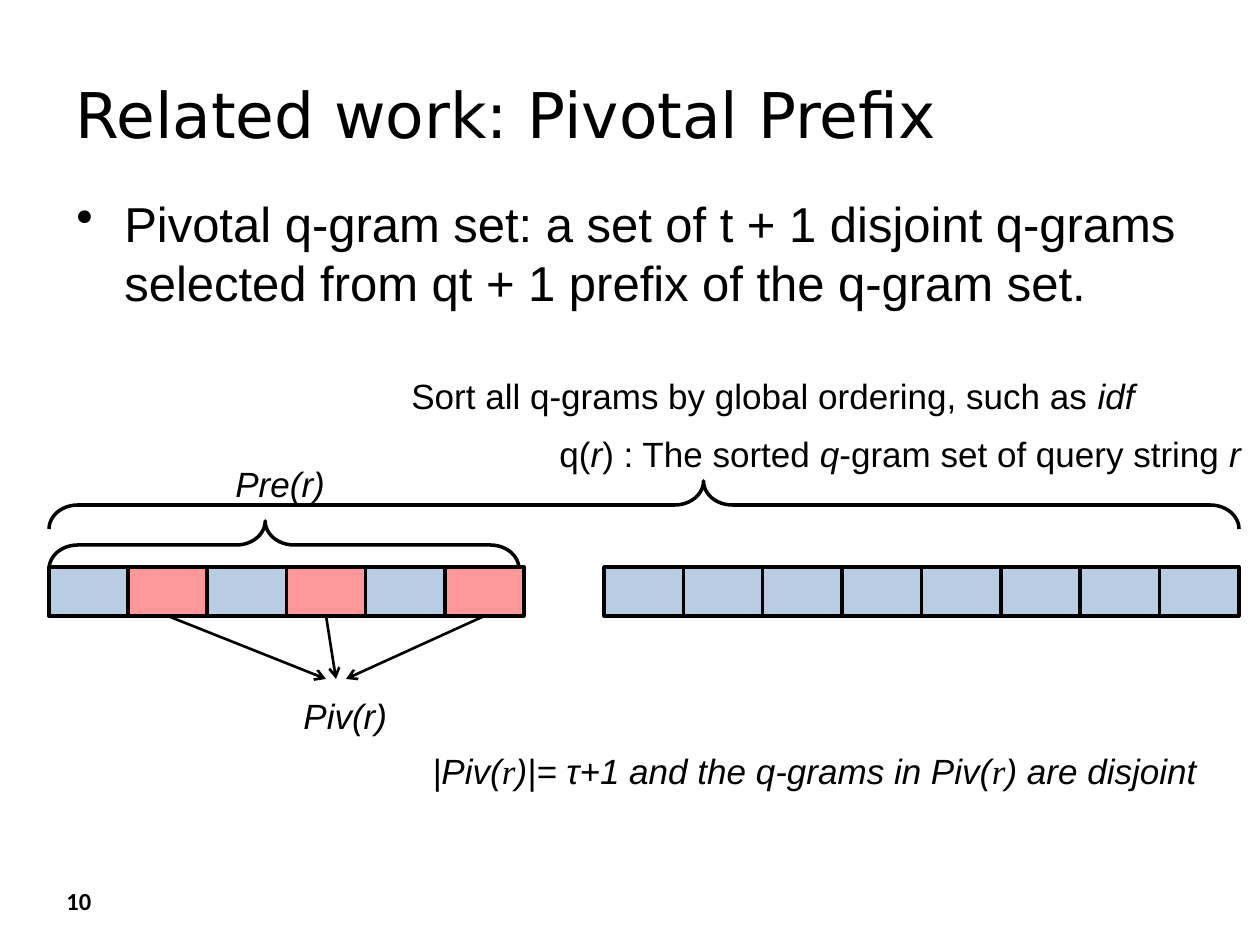
from lxml import etree
from pptx import Presentation
from pptx import util as u
from pptx.dml.color import RGBColor
from pptx.enum import shapes, text
from pptx.oxml.ns import qn

PX = 914400 / 126
COLORS = {"black": "000000", "gram": "4F81BD", "pivot": "FF0000"}
BLACK = RGBColor.from_string(COLORS["black"])


def px(*values):
    return [u.Emu(round(v * PX)) for v in values]


def add_text(box, runs, size, indent=0, hanging=0, bullet=None, wrap=True, top=6):
    """Add one paragraph; each run is its text and a dict of font values."""
    tf = s.shapes.add_textbox(*px(*box)).text_frame
    tf.word_wrap = wrap
    tf.vertical_anchor = text.MSO_ANCHOR.TOP
    tf.margin_top = px(top)[0]
    p = tf.paragraphs[0]
    pPr = p._p.get_or_add_pPr()
    pPr.set("marL", str(px(indent)[0]))
    pPr.set("indent", str(px(-hanging)[0]))
    if bullet:
        etree.SubElement(pPr, qn("a:buChar")).set("char", bullet)
    p.line_spacing = u.Pt(round(size * 1.22, 1))
    for words, font in runs:
        r = p.add_run()
        r.text = words
        r.font.color.rgb = BLACK
        for name, value in {"name": "Arial", "size": u.Pt(size), **font}.items():
            setattr(r.font, name, value)


prs = Presentation()
prs.slide_width, prs.slide_height = px(1260, 945)
s = prs.slides.add_slide(prs.slide_layouts[6])

# Title, statement and slide number
add_text((54, 879, 59, 43), [("10", {"name": "Calibri", "bold": True})], 14)
add_text((63, 66, 1134, 110),
         [("Related work: Pivotal Prefix", {"name": "DejaVu Sans"})], 36, top=8)
add_text((64, 184, 1134, 173),
         [("Pivotal q-gram set: a set of t + 1 disjoint q-grams selected "
           "from qt + 1 prefix of the q-gram set.", {})],
         28, indent=48, hanging=48, bullet="•", top=8)

# Prefix cells, then the rest of the sorted q-gram set
cells = []
for left, width, count, pivots in ((49, 475, 6, (1, 3, 5)), (604, 635, 8, ())):
    for i in range(count):
        sp = s.shapes.add_shape(shapes.MSO_SHAPE.RECTANGLE,
                                *px(left + i * width / count, 567, width / count, 49))
        sp.shadow.inherit = False
        sp.fill.solid()
        color = COLORS["pivot" if i in pivots else "gram"]
        sp.fill.fore_color.rgb = RGBColor.from_string(color)
        srgb = sp._element.spPr.find(".//" + qn("a:srgbClr"))
        etree.SubElement(srgb, qn("a:alpha")).set("val", "40000")
        sp.line.color.rgb = BLACK
        sp.line.width = u.Pt(2)
        cells.append(sp)

# Braces: right braces turned to point up
for left, top, width, height, tip in ((49, 481, 1190, 48, 0.55), (49, 521, 470, 48, 0.46)):
    sp = s.shapes.add_shape(shapes.MSO_SHAPE.RIGHT_BRACE,
                            *px(left + (width - height) / 2, top - (width - height) / 2,
                                height, width))
    sp.rotation = 270
    sp.adjustments[0] = 0.6
    sp.adjustments[1] = tip
    sp.shadow.inherit = False
    sp.fill.background()
    sp.line.color.rgb = BLACK
    sp.line.width = u.Pt(2)

# Arrows from the pivotal cells to their label
for i, end_x in ((1, 326), (3, 336), (5, 346)):
    c = s.shapes.add_connector(shapes.MSO_CONNECTOR.STRAIGHT, *px(0, 0, end_x, 679))
    c.begin_connect(cells[i], 2)
    c.line.color.rgb = BLACK
    c.line.width = u.Pt(1.5)
    etree.SubElement(c.line._get_or_add_ln(), qn("a:tailEnd")).set("type", "arrow")
    etree.SubElement(c._element.spPr, qn("a:effectLst"))

# Labels
ITALIC = {"italic": True}
SERIF = {"italic": True, "name": "Times New Roman"}
labels = [
    ((336, 368, 891, 55), True,
     [("Sort all q-grams by global ordering, such as ", {}), ("idf", ITALIC)]),
    ((484, 426, 774, 55), False,
     [("q(", {}), ("r", ITALIC), (") : The sorted ", {}), ("q", ITALIC),
      ("-gram set of query string ", {}), ("r", ITALIC)]),
    ((160, 456, 207, 55), True, [("Pre(r)", ITALIC)]),
    ((228, 688, 207, 55), True, [("Piv(r)", ITALIC)]),
    ((357, 743, 979, 55), True,
     [("|Piv(", ITALIC), ("r", SERIF), (")|= τ+1 and the q-grams in Piv(", ITALIC),
      ("r", SERIF), (") are disjoint", ITALIC)]),
]
for box, wrap, runs in labels:
    add_text(box, runs, 20, indent=63, wrap=wrap)

prs.save("out.pptx")
